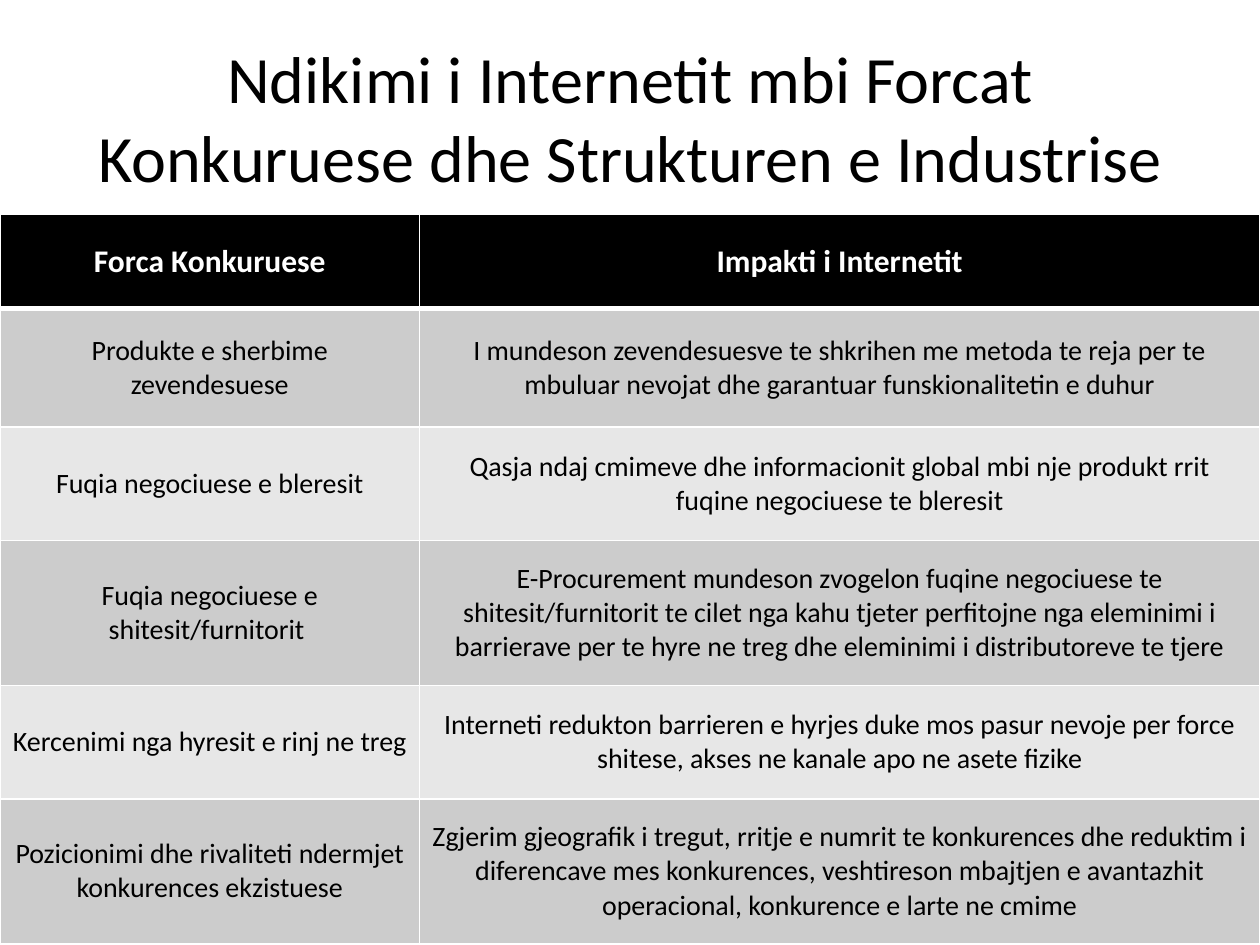
from typing import NamedTuple

from lxml.etree import SubElement
from pptx import Presentation
from pptx.dml.color import RGBColor
from pptx.enum.text import MSO_ANCHOR as Anchor, PP_ALIGN as Align
from pptx.oxml.ns import qn
from pptx.util import Inches, Pt

FONT = "Calibri"
COL_WIDTHS = (3.33, 6.67)
HEADER_FILL = "000000"
BAND_FILLS = ("CCCCCC", "E7E7E7")


class Row(NamedTuple):
    height: float
    force: str
    impact: str


ROWS = [
    Row(0.75, "Forca Konkuruese", "Impakti i Internetit"),
    Row(0.94, "Produkte e sherbime zevendesuese",
        "I mundeson zevendesuesve te shkrihen me metoda te reja per te "
        "mbuluar nevojat dhe garantuar funskionalitetin e duhur"),
    Row(0.9, "Fuqia negociuese e bleresit",
        "Qasja ndaj cmimeve dhe informacionit global mbi nje produkt rrit "
        "fuqine negociuese te bleresit"),
    Row(1.15, "Fuqia negociuese e shitesit/furnitorit ",
        "E-Procurement mundeson zvogelon fuqine negociuese te "
        "shitesit/furnitorit te cilet nga kahu tjeter perfitojne nga eleminimi i "
        "barrierave per te hyre ne treg dhe eleminimi i distributoreve te tjere"),
    Row(0.9, "Kercenimi nga hyresit e rinj ne treg",
        "Interneti redukton barrieren e hyrjes duke mos pasur nevoje per force "
        "shitese, akses ne kanale apo ne asete fizike"),
    Row(1.15, "Pozicionimi dhe rivaliteti ndermjet konkurences ekzistuese",
        "Zgjerim gjeografik i tregut, rritje e numrit te konkurences dhe reduktim i "
        "diferencave mes konkurences, veshtireson mbajtjen e avantazhit "
        "operacional, konkurence e larte ne cmime"),
]


def rgb(value: str) -> RGBColor:
    return RGBColor.from_string(value)


def write(tf, text: str, size: float, color: str, bold: bool = False) -> None:
    p = tf.paragraphs[0]
    p.alignment = Align.CENTER
    r = p.add_run()
    r.text = text
    r.font.name, r.font.size, r.font.bold = FONT, Pt(size), bold
    r.font.color.rgb = rgb(color)


def add_borders(cell, bottom: float, top: float) -> None:
    """Draw white borders; must run before the cell is filled."""
    tc_pr = cell._tc.get_or_add_tcPr()
    for side, width in (("L", 1), ("R", 1), ("T", top), ("B", bottom)):
        ln = SubElement(tc_pr, qn(f"a:ln{side}"), w=str(Pt(width)))
        fill = SubElement(ln, qn("a:solidFill"))
        SubElement(fill, qn("a:srgbClr"), val="FFFFFF")


def add_title(s, text: str) -> None:
    tf = s.shapes.add_textbox(Inches(0.5), Inches(0.3), Inches(9), Inches(1.25)).text_frame
    tf.word_wrap = True
    tf.vertical_anchor = Anchor.MIDDLE
    write(tf, text, 37.8, "000000")


def add_forces_table(s, rows: list[Row]) -> None:
    height = sum(row.height for row in rows)
    table = s.shapes.add_table(len(rows), len(COL_WIDTHS), Inches(0), Inches(1.7),
                               Inches(10), Inches(height)).table
    for column, width in zip(table.columns, COL_WIDTHS):
        column.width = Inches(width)
    for i, row in enumerate(rows):
        header = i == 0
        table.rows[i].height = Inches(row.height)
        for j, text in enumerate((row.force, row.impact)):
            cell = table.cell(i, j)
            add_borders(cell, bottom=3 if header else 1, top=3 if i == 1 else 1)
            cell.fill.solid()
            cell.fill.fore_color.rgb = rgb(HEADER_FILL if header else BAND_FILLS[(i - 1) % 2])
            cell.vertical_anchor = Anchor.MIDDLE
            write(cell.text_frame, text, 18 if header else 16,
                  "FFFFFF" if header else "000000", header)


def main() -> None:
    prs = Presentation()
    prs.slide_width, prs.slide_height = Inches(10), Inches(7.5)
    s = prs.slides.add_slide(prs.slide_layouts[6])
    add_title(s, "Ndikimi i Internetit mbi Forcat Konkuruese dhe Strukturen e Industrise")
    add_forces_table(s, ROWS)
    prs.save("out.pptx")


if __name__ == "__main__":
    main()
